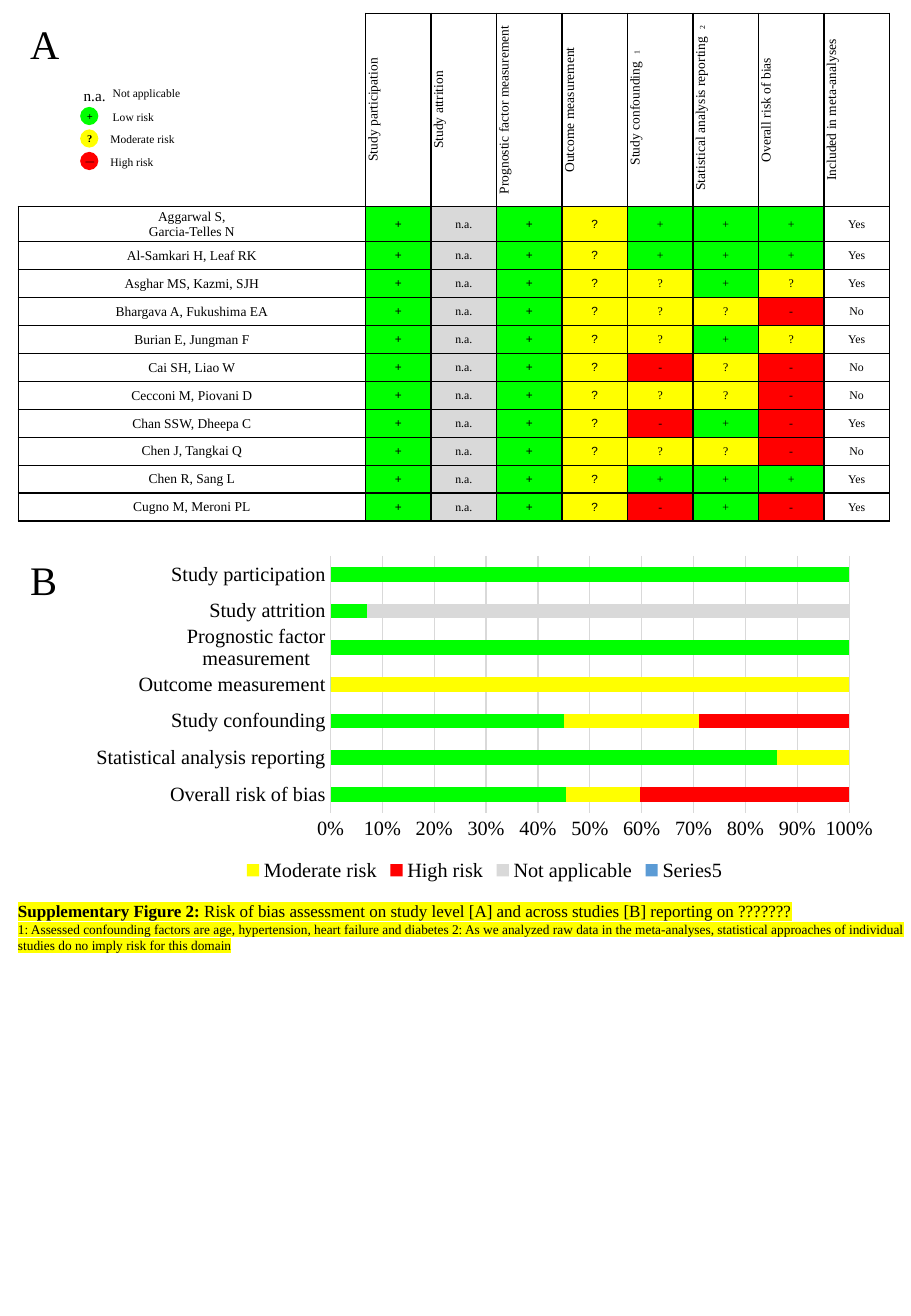
from lxml.etree import SubElement
from pptx import Presentation
from pptx.chart.data import CategoryChartData
from pptx.dml.color import RGBColor
from pptx.enum.chart import XL_CHART_TYPE as ChartType, XL_LEGEND_POSITION as LegendPosition
from pptx.enum.chart import XL_TICK_MARK as TickMark
from pptx.enum.shapes import MSO_SHAPE as Shape
from pptx.enum.text import MSO_ANCHOR as Anchor, MSO_AUTO_SIZE as AutoSize, PP_ALIGN as Align
from pptx.oxml import parse_xml
from pptx.oxml.ns import nsdecls, qn
from pptx.util import Inches, Pt

COLORS = {"black": "000000", "low": "00FF00", "moderate": "FFFF00",
          "high": "FF0000", "neutral": "D9D9D9", "blue": "5B9BD5"}
MARK_COLORS = {"+": "low", "?": "moderate", "-": "high", "n.a.": "neutral"}
COLUMNS, ROWS = 75, 108.3

DOMAINS = ["Study participation", "Study attrition", "Prognostic factor measurement",
           "Outcome measurement", "Study confounding", "Statistical analysis reporting",
           "Overall risk of bias"]
FOOTNOTES = {"Study confounding": "1", "Statistical analysis reporting": "2"}
SHARED_MARKS = ["+", "n.a.", "+", "?"]
STUDIES = [
    ("Aggarwal S,\nGarcia-Telles N", "+++", "Yes"),
    ("Al-Samkari H, Leaf RK", "+++", "Yes"),
    ("Asghar MS, Kazmi, SJH", "?+?", "Yes"),
    ("Bhargava A, Fukushima EA", "??-", "No"),
    ("Burian E, Jungman F", "?+?", "Yes"),
    ("Cai SH, Liao W", "-?-", "No"),
    ("Cecconi M, Piovani D", "??-", "No"),
    ("Chan SSW, Dheepa C", "-+-", "Yes"),
    ("Chen J, Tangkai Q", "??-", "No"),
    ("Chen R, Sang L", "+++", "Yes"),
    ("Cugno M, Meroni PL", "-+-", "Yes"),
]
SERIES = [
    ("Low risk", [45, 86, 45, 0, 100, 7, 100], "low"),
    ("Moderate risk", [14, 14, 26, 100, 0, 0, 0], "moderate"),
    ("High risk", [40, 0, 29, 0, 0, 0, 0], "high"),
    ("Not applicable", [0, 0, 0, 0, 0, 93, 0], "neutral"),
    ("Series5", [None] * 7, "blue"),
]
LEGEND_LABELS = [("Not applicable", 8.3, 6.6, 7.6), ("Low risk", 8.3, 8.6, 5.4),
                 ("Moderate risk", 8.1, 10.4, 7.3), ("High risk", 8.1, 12.3, 5.6)]
LEGEND_DOTS = [("+", "low", 6.2), ("?", "moderate", 6.2), ("—", "high", 5.1)]


class FigureSlide:
    def __init__(self, presentation, font="Times New Roman"):
        self.font = font
        self.column = presentation.slide_width / COLUMNS
        self.row = presentation.slide_height / ROWS
        self.slide = presentation.slides.add_slide(presentation.slide_layouts[6])

    def box(self, left, top, width, height):
        return (round(left * self.column), round(top * self.row),
                round(width * self.column), round(height * self.row))

    def color(self, name):
        return RGBColor.from_string(COLORS[name])

    def style(self, font, size, bold=False, name=None):
        font.size, font.bold, font.name = Pt(size), bold, name or self.font
        font.color.rgb = self.color("black")

    def format(self, text_frame, size, align=Align.LEFT, bold=False, name=None):
        for paragraph in text_frame.paragraphs:
            paragraph.alignment = align
            for run in paragraph.runs:
                self.style(run.font, size, bold, name)

    def text(self, text, box, size, wrap=True):
        text_frame = self.slide.shapes.add_textbox(*self.box(*box)).text_frame
        text_frame.text = text
        text_frame.word_wrap = wrap
        text_frame.auto_size = AutoSize.SHAPE_TO_FIT_TEXT
        self.format(text_frame, size)
        return text_frame

    def dot(self, mark, color, box, size):
        shape = self.slide.shapes.add_shape(Shape.OVAL, *self.box(*box))
        shape.shadow.inherit = False
        shape.fill.solid()
        shape.fill.fore_color.rgb = self.color(color)
        shape.line.fill.background()
        text_frame = shape.text_frame
        text_frame.margin_left = Inches(0.01)
        text_frame.margin_right = text_frame.margin_top = text_frame.margin_bottom = 0
        text_frame.vertical_anchor = Anchor.MIDDLE
        text_frame.text = mark
        self.format(text_frame, size, Align.CENTER, bold=True)

    def cell(self, cell, text, size, name=None, hidden_sides=""):
        cell.text = text
        cell.vertical_anchor = Anchor.MIDDLE
        cell.margin_left = cell.margin_right = cell.margin_top = cell.margin_bottom = 0
        self.format(cell.text_frame, size, Align.CENTER, name=name)
        properties = cell._tc.get_or_add_tcPr()
        for side in "LRTB":
            line = SubElement(properties, qn(f"a:ln{side}"), w=str(Pt(1)))
            if side in hidden_sides:
                SubElement(line, qn("a:noFill"))
            else:
                fill = SubElement(line, qn("a:solidFill"))
                SubElement(fill, qn("a:srgbClr"), val=COLORS["black"])
        if text in MARK_COLORS:
            cell.fill.solid()
            cell.fill.fore_color.rgb = self.color(MARK_COLORS[text])
        else:
            cell.fill.background()

    def header(self, cell, text):
        self.cell(cell, text, 8)
        cell._tc.get_or_add_tcPr().set("vert", "vert270")
        if text in FOOTNOTES:
            paragraph = cell.text_frame.paragraphs[0]
            paragraph.runs[0].text = text + " "
            run = paragraph.add_run()
            run.text = FOOTNOTES[text]
            self.style(run.font, 8)
            run.font._element.set("baseline", "30000")

    def risk_table(self, box):
        headers = DOMAINS + ["Included in meta-analyses"]
        frame = self.slide.shapes.add_table(len(STUDIES) + 1, len(headers) + 1, *self.box(*box))
        table = frame.table
        table.first_row = table.horz_banding = False
        for index, column in enumerate(table.columns):
            column.width = round((5.39 if index else 28.6) * self.column)
        for index, row in enumerate(table.rows):
            row.height = round({0: 15.9, 1: 2.9}.get(index, 2.3) * self.row)
        self.cell(table.cell(0, 0), "", 8, hidden_sides="LT")
        for index, text in enumerate(headers, 1):
            self.header(table.cell(0, index), text)
        for row, (study, marks, included) in enumerate(STUDIES, 1):
            self.cell(table.cell(row, 0), study, 8)
            for index, text in enumerate([*SHARED_MARKS, *marks, included], 1):
                self.cell(table.cell(row, index), text, 7, "Arial" if index in (1, 3, 4) else None)

    def risk_chart(self, box):
        data = CategoryChartData()
        data.categories = DOMAINS[::-1]
        for name, values, _ in SERIES:
            data.add_series(name, values)
        chart = self.slide.shapes.add_chart(
            ChartType.BAR_STACKED_100, *self.box(*box), data).chart
        self.style(chart.font, 10)
        chart.has_title = False
        plot = chart.plots[0]
        plot.gap_width, plot.overlap, plot.vary_by_categories = 150, 100, False
        for series, (_, _, color) in zip(plot.series, SERIES):
            series.format.fill.solid()
            series.format.fill.fore_color.rgb = self.color(color)
        for axis in (chart.category_axis, chart.value_axis):
            axis.major_tick_mark = axis.minor_tick_mark = TickMark.NONE
            self.style(axis.tick_labels.font, 12)
        chart.value_axis.tick_labels.number_format = "0%"
        chart.value_axis.tick_labels.number_format_is_linked = False
        chart.value_axis.format.line.fill.background()
        for line in (chart.category_axis.format.line, chart.value_axis.major_gridlines.format.line):
            line.color.rgb = self.color("neutral")
            line.width = Pt(0.75)
        chart.has_legend = True
        legend = chart.legend
        legend.position, legend.include_in_layout = LegendPosition.BOTTOM, False
        self.style(legend.font, 12)
        legend._element.find(qn("c:legendPos")).addnext(parse_xml(
            f'<c:legendEntry {nsdecls("c")}><c:idx val="4"/><c:delete val="1"/></c:legendEntry>'))

    def caption(self, label, title, notes, box):
        text_frame = self.text(f"{label}\n{notes}", box, 7.9)
        heading = text_frame.paragraphs[0]
        self.style(heading.runs[0].font, 10.1, bold=True)
        run = heading.add_run()
        run.text = title
        self.style(run.font, 10.1)
        for paragraph in text_frame.paragraphs:
            for run in paragraph.runs:
                highlight = parse_xml(f'<a:highlight {nsdecls("a")}>'
                                      f'<a:srgbClr val="{COLORS["moderate"]}"/></a:highlight>')
                run.font._element.find(qn("a:solidFill")).addnext(highlight)


def main():
    presentation = Presentation()
    presentation.slide_width, presentation.slide_height = Inches(7.5), Inches(10.83)
    figure = FigureSlide(presentation)
    figure.risk_table((1.5, 1.1, 71.7, 41.7))
    figure.text("A", (1.5, 1.1, 3.1, 5), 24)
    for index, (mark, color, size) in enumerate(LEGEND_DOTS):
        figure.dot(mark, color, (6.6, 8.8 + 1.85 * index, 1.5, 1.5), size)
    figure.text("n.a.", (5.9, 6.6, 3.8, 2.5), 9, wrap=False)
    for label, left, top, width in LEGEND_LABELS:
        figure.text(label, (left, top, width, 2.1), 6.8, wrap=False)
    figure.caption(
        "Supplementary Figure 2: ",
        "Risk of bias assessment on study level [A] and across studies [B] reporting on ???????",
        "1: Assessed confounding factors are age, hypertension, heart failure and diabetes "
        "2: As we analyzed raw data in the meta-analyses, statistical approaches of individual "
        "studies do no imply risk for this domain", (0.5, 73.6, 75, 5.4))
    figure.risk_chart((6.6, 45.2, 66.6, 27.7))
    figure.text("B", (1.5, 45.2, 3.1, 5), 24)
    presentation.save("out.pptx")


if __name__ == "__main__":
    main()
